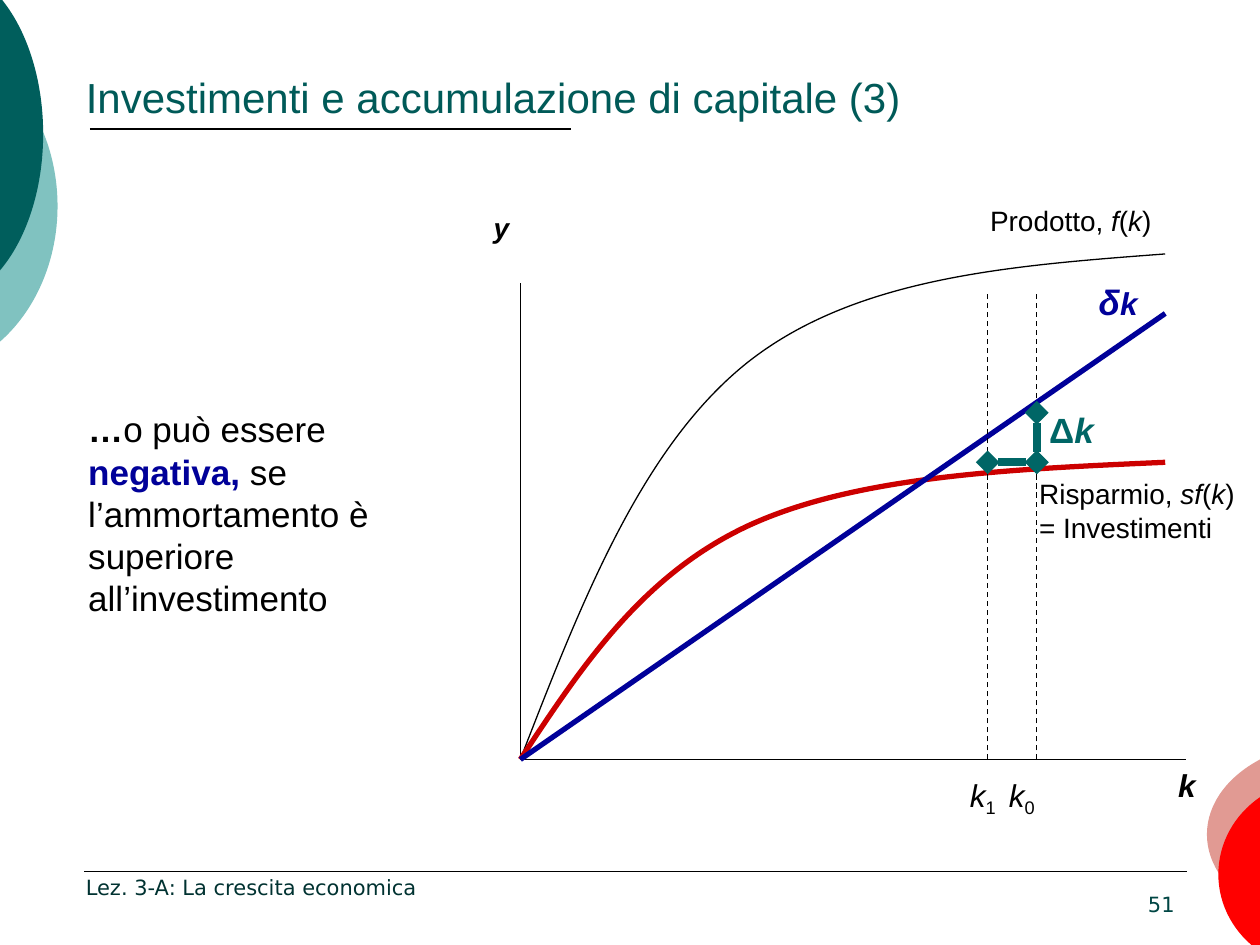
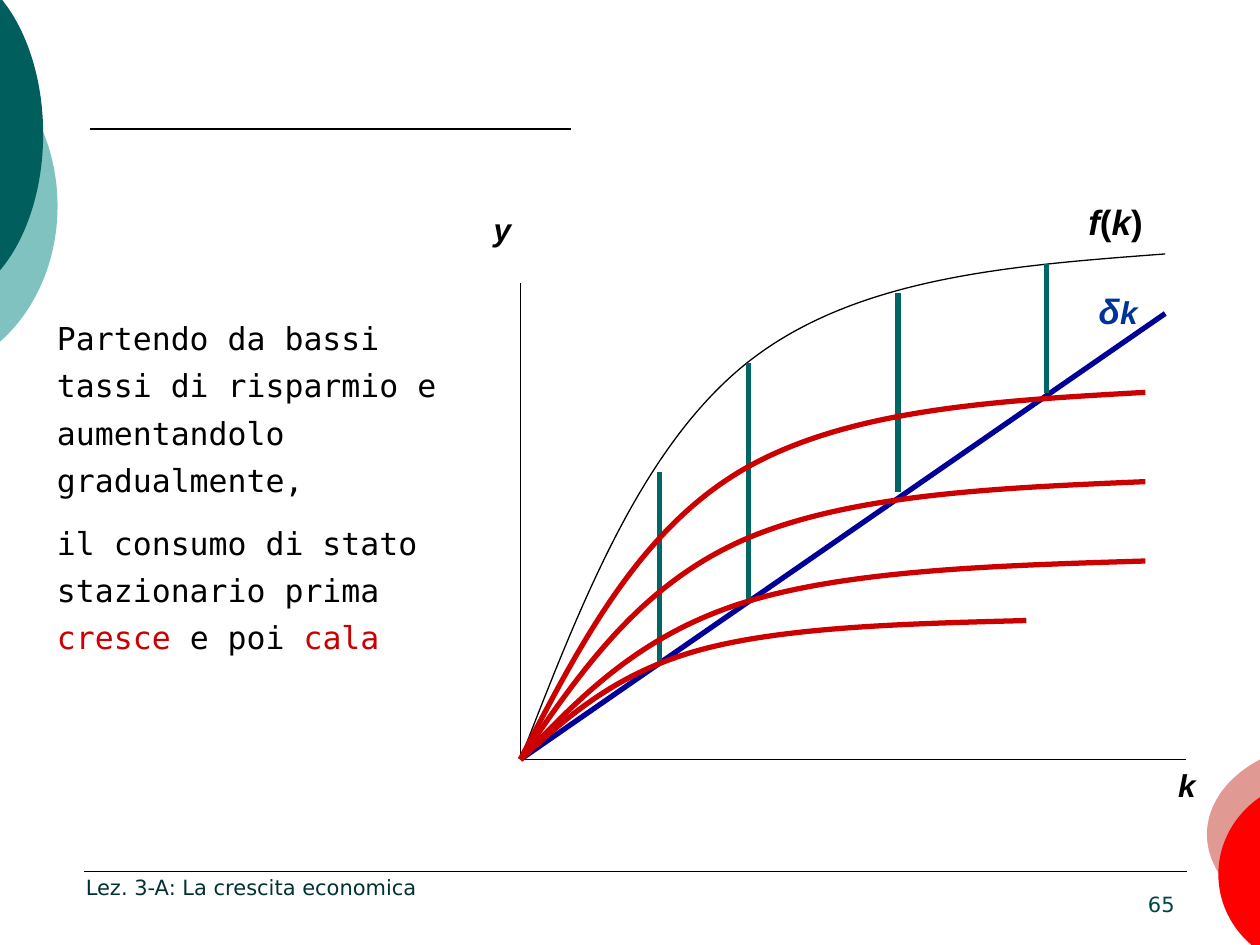
from collections import namedtuple

from lxml import etree
from pptx import Presentation
from pptx import util as u
from pptx.dml.color import RGBColor
from pptx.enum import dml, shapes, text
from pptx.oxml import ns

Cm, Pt = u.Cm, u.Pt

# All lengths are centimetres
Box = namedtuple("Box", "left top width height")
Run = namedtuple("Run", "text flags color size", defaults=("", None, None))

COLORS = {
    "black": "000000",
    "title": "005A58",
    "number": "004644",
    "footer": "003231",
    "dark_teal": "005E5C",
    "light_teal": "80C2C0",
    "pink": "E19A93",
    "bright_red": "FF0000",
    "red": "CC0000",
    "navy": "000099",
    "blue": "003399",
    "teal": "006666",
}
SANS, FOOT, MONO = "Arial", "DejaVu Sans", "DejaVu Sans Mono"

PAGE = Box(0, 0, 25.4, 19.05)
PLOT = Box(10.49, 5.12, 13, 10.19)
SIDE_TEXT_1 = Box(1.53, 8.1, 8.18, 4.52)
SIDE_TEXT_2 = Box(0.9, 6.12, 8.99, 6.35)

# Bézier control points in percent of the shape's box, from its top left
GROWTH_CURVE = [(0, 100), (9.4, 69.1), (18.8, 38), (35.4, 21.3),
                (52.1, 4.6), (76, 2.3), (100, 0)]
HALF_LENS = [(78.2, 9), (91.8, 18.4), (100, 33.6), (100, 50),
             (100, 66.4), (91.8, 81.6), (78.2, 91)]


def rgb(name):
    return RGBColor.from_string(COLORS[name])


def add_outline(slide, box, controls, close=False):
    """Freeform of cubic Bézier segments that fills the box."""
    builder = slide.shapes.build_freeform(*controls[0])
    builder.add_line_segments(controls[1:], close=close)
    sp = builder.convert_to_shape()
    sp.left, sp.top, sp.width, sp.height = (Cm(v) for v in box)
    sp.shadow.inherit = False

    # Straight segments become curves on a grid of hundredths of a percent
    outline = next(sp._element.iter(ns.qn("a:path")))
    for child in list(outline):
        outline.remove(child)
    outline.set("w", "10000")
    outline.set("h", "10000")
    groups = [("a:moveTo", controls[:1])]
    groups += [("a:cubicBezTo", controls[i:i + 3])
               for i in range(1, len(controls), 3)]
    for tag, points in groups:
        segment = etree.SubElement(outline, ns.qn(tag))
        for x, y in points:
            etree.SubElement(segment, ns.qn("a:pt"),
                             x=str(round(x * 100)), y=str(round(y * 100)))
    if close:
        etree.SubElement(outline, ns.qn("a:close"))
    return sp


def add_line(slide, start, end, color="black", width=0.75,
             dashed=False, diamonds=False):
    line = slide.shapes.add_connector(
        shapes.MSO_CONNECTOR.STRAIGHT, *(Cm(v) for v in (*start, *end)))
    line.line.color.rgb = rgb(color)
    line.line.width = Pt(width)
    if dashed:
        line.line.dash_style = dml.MSO_LINE.DASH
    spPr = line._element.spPr
    if diamonds:
        ln = spPr.find(ns.qn("a:ln"))
        for tag in ("a:headEnd", "a:tailEnd"):
            etree.SubElement(ln, ns.qn(tag), type="diamond")
    etree.SubElement(spPr, ns.qn("a:effectLst"))


def add_text(slide, box, paragraphs, size, font=SANS, color="black",
             bottom=False, right=False, spacing=None, gap=0):
    """Each paragraph is a list of runs; flags are b, i and _ (subscript)."""
    sp = slide.shapes.add_textbox(*(Cm(v) for v in box))
    tf = sp.text_frame
    tf.word_wrap = True
    tf.vertical_anchor = (text.MSO_ANCHOR.BOTTOM if bottom
                          else text.MSO_ANCHOR.TOP)
    for i, runs in enumerate(paragraphs):
        p = tf.add_paragraph() if i else tf.paragraphs[0]
        p.alignment = text.PP_ALIGN.RIGHT if right else text.PP_ALIGN.LEFT
        p.line_spacing = spacing
        p.space_before = Pt(gap if i else 0)
        for run in runs:
            r = p.add_run()
            r.text = run.text
            r.font.name = font
            r.font.size = Pt(run.size or size)
            r.font.bold = "b" in run.flags
            r.font.italic = "i" in run.flags
            r.font.color.rgb = rgb(run.color or color)
            if "_" in run.flags:
                r._r.get_or_add_rPr().set("baseline", "-25000")


def add_frame(slide, box, number, title=None):
    """Corner ornaments, rules, title and footer."""
    for x, y, width, height, color, rotation in (
            (-4.3, 0.79, 5.46, 6.73, "light_teal", 0),
            (-3.23, -0.69, 4.1, 6.78, "dark_teal", 0),
            (24.33, 14.94, 5.18, 3.76, "pink", 180),
            (24.56, 15.72, 3.89, 3.81, "bright_red", 180)):
        sp = add_outline(slide, Box(box.left + x, box.top + y, width, height),
                         HALF_LENS, close=True)
        sp.rotation = rotation
        sp.fill.solid()
        sp.fill.fore_color.rgb = rgb(color)
        sp.line.fill.background()
    for x1, x2, y, width in ((1.81, 11.51, 2.6, 1),
                             (1.7, 23.92, 17.57, 0.75)):
        add_line(slide, (box.left + x1, box.top + y),
                 (box.left + x2, box.top + y), width=width)
    if title:
        add_text(slide, Box(box.left + 1.48, box.top + 1.32, 22.86, 2.59),
                 [[Run(title)]], 24, color="title")
    add_text(slide, Box(box.left + 20.7, box.top + 17.33, 3.23, 1.27),
             [[Run(str(number))]], 12, FOOT, "number", bottom=True, right=True)
    add_text(slide, Box(box.left + 1.48, box.top + 17.35, 11.02, 0.91),
             [[Run("Lez. 3-A: La crescita economica")]], 12, FOOT, "footer",
             bottom=True)


class Diagram:
    """Axes k and y; positions count right and up from the origin."""

    def __init__(self, slide, box, y_size):
        self.slide, self.box = slide, box
        self.line((0, 9.6), (0, 0))
        self.line((0, 0), (13.41, 0))
        self.label(-0.79, 11.2, 4.6, [Run("y", "bi")], y_size)
        self.label(13.01, 0, 1.6, [Run("k", "bi")], 18)
        self.curve(box.width, box.height, "black", 0.75)

    def at(self, x, y):
        return self.box.left + x, self.box.top + self.box.height - y

    def line(self, start, end, *args, **kwargs):
        add_line(self.slide, self.at(*start), self.at(*end), *args, **kwargs)

    def curve(self, width, height, color="red", weight=3):
        sp = add_outline(self.slide, Box(*self.at(0, height), width, height),
                         GROWTH_CURVE)
        sp.fill.background()
        sp.line.color.rgb = rgb(color)
        sp.line.width = Pt(weight)

    def depreciation(self):
        self.line((0, 0), (self.box.width, 8.99), "navy", 3)

    def depreciation_label(self, y, width, color):
        self.label(11.41, y, width,
                   [Run("δ", "bi"), Run("k", "bi", size=18)], 20, color)

    def label(self, x, y, width, runs, size, color="black", lines=1):
        height = 0.26 + 0.04 * size * lines + 0.04
        add_text(self.slide, Box(*self.at(x, y), width, height), [runs], size,
                 color=color)


def add_accumulation_diagram(slide, box):
    k0, k1, saving, loss = 10.41, 9.42, 5.99, 6.99
    d = Diagram(slide, box, y_size=16)
    f_of_k = [Run("f", "i"), Run("("), Run("k", "i"), Run(")")]
    d.label(9.22, 11.33, 3.99, [Run("Prodotto, "), *f_of_k], 16)
    d.curve(box.width, saving)
    d.label(10.21, 5.82, 4.6, [Run("Risparmio, "), Run("sf", "i"), Run("("),
                               Run("k", "i"), Run(") = Investimenti")],
            16, lines=2)
    d.depreciation()
    # Capital levels
    for k, x, index in ((k0, 9.6, "0"), (k1, 8.81, "1")):
        d.line((k, 0), (k, 9.4), dashed=True)
        d.label(x, -0.2, 1.2, [Run("k", "i"), Run(index, "_")], 18)
    # Change in capital
    for start, end in (((k0, loss), (k0, saving)), ((k0, saving), (k1, saving))):
        d.line(start, end, "teal", 4.5, diamonds=True)
    d.label(k0, 7.19, 2.6, [Run("Δ", "b"), Run("k", "bi")], 20, "teal")
    d.depreciation_label(9.78, 2, "navy")


def add_consumption_diagram(slide, box):
    d = Diagram(slide, box, y_size=18)
    d.label(11.2, 11.39, 2, [Run("f", "bi"), Run("(", "b"), Run("k", "bi"),
                             Run(")", "b")], 20)
    d.depreciation_label(9.59, 1.6, "blue")
    d.depreciation()
    # Steady-state consumption
    for k, low, high in ((2.81, 1.98, 5.79), (4.6, 3.2, 8),
                         (7.61, 5.39, 9.4), (10.61, 7.39, 9.99)):
        d.line((k, low), (k, high), "teal", 3)
    # Rising saving rates
    for width, height in ((10.2, 2.8), (12.6, 4), (12.6, 5.6), (12.6, 7.4)):
        d.curve(width, height)


def main():
    prs = Presentation()
    prs.slide_width, prs.slide_height = Cm(PAGE.width), Cm(PAGE.height)
    blank = prs.slide_layouts[6]

    # Negative accumulation
    slide = prs.slides.add_slide(blank)
    add_frame(slide, PAGE, 51, "Investimenti e accumulazione di capitale (3)")
    add_accumulation_diagram(slide, PLOT)
    add_text(slide, SIDE_TEXT_1, [[
        Run("…", "b"), Run("o può essere "), Run("negativa,", "b", "navy"),
        Run(" se l’ammortamento è superiore all’investimento")]], 20)

    # Steady-state consumption and saving
    slide = prs.slides.add_slide(blank)
    add_frame(slide, PAGE, 65)
    add_consumption_diagram(slide, PLOT)
    add_text(slide, SIDE_TEXT_2, [
        [Run("Partendo da bassi tassi di risparmio e aumentandolo "
             "gradualmente,")],
        [Run("il consumo di stato stazionario prima "),
         Run("cresce", color="red"), Run(" e poi "), Run("cala", color="red")],
    ], 18, MONO, spacing=1.25, gap=9)

    prs.save("out.pptx")


if __name__ == "__main__":
    main()
